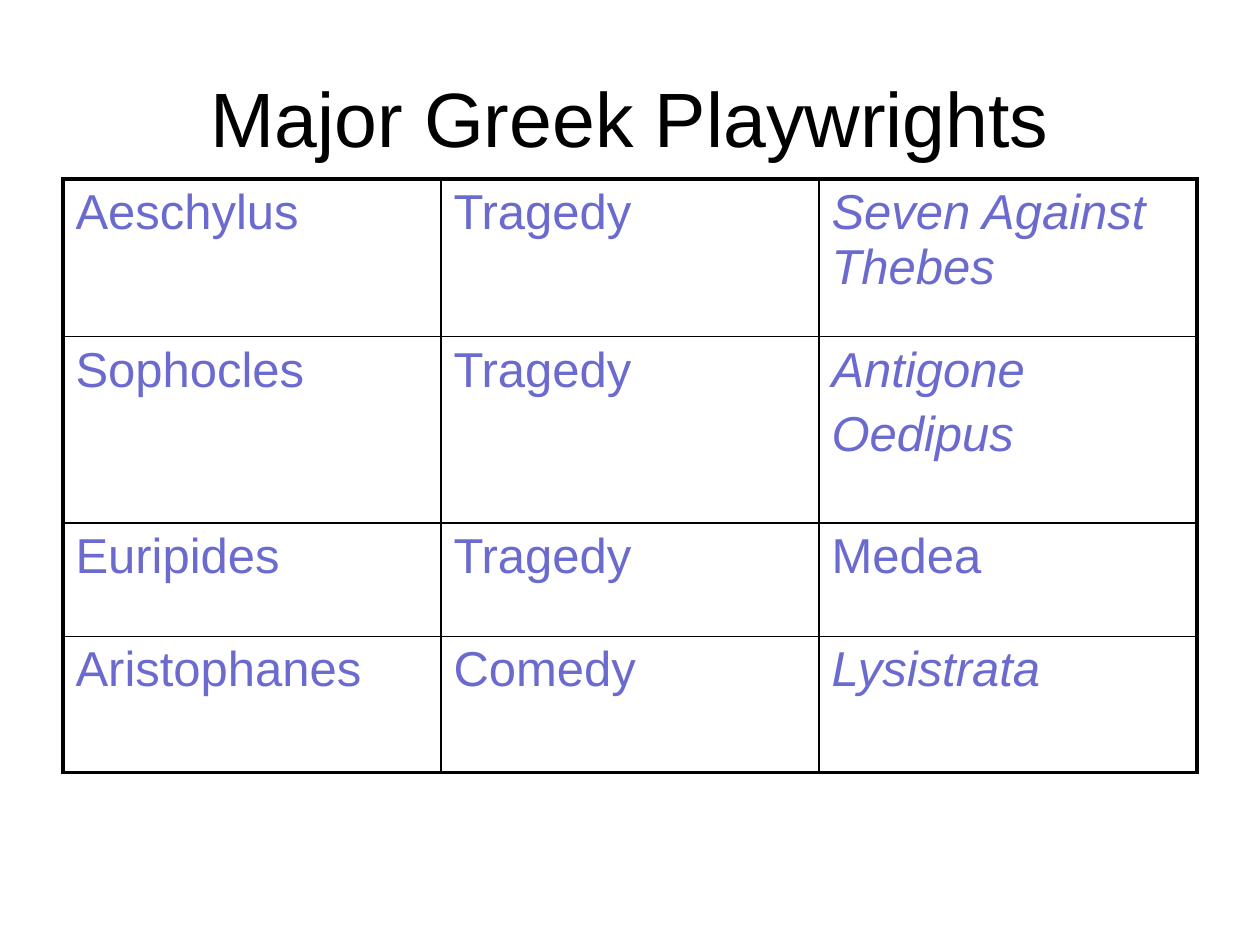
from lxml.etree import SubElement
from pptx import Presentation
from pptx.dml.color import RGBColor
from pptx.enum.text import MSO_ANCHOR, PP_ALIGN
from pptx.oxml.ns import qn
from pptx.util import Inches, Pt

COLOURS = {"title": "000000", "border": "000000", "body": "6B6BCF"}
FORMATS = {
    "title": {"name": "Arial", "size": Pt(44)},
    "body": {"name": "Arial", "size": Pt(28), "italic": False},
    "work": {"name": "Arial", "size": Pt(28), "italic": True},
}
THICK, THIN = Pt(2.25), Pt(1)
PLAYWRIGHTS = [
    ("Aeschylus", "Tragedy", ["Seven Against Thebes"], "work"),
    ("Sophocles", "Tragedy", ["Antigone", "Oedipus"], "work"),
    ("Euripides", "Tragedy", ["Medea"], "body"),
    ("Aristophanes", "Comedy", ["Lysistrata"], "work"),
]
ROW_HEIGHTS = [2.5, 2.96, 1.8, 2.16]


class SlideBuilder:
    columns, rows = 20, 15

    def __init__(self, deck):
        self.slide = deck.slides.add_slide(deck.slide_layouts[6])
        self.column = deck.slide_width / self.columns
        self.row = deck.slide_height / self.rows

    def place(self, left, top, width, height):
        return (int(left * self.column), int(top * self.row),
                int(width * self.column), int(height * self.row))

    def add_lines(self, frame, lines, style, colour, align=PP_ALIGN.LEFT):
        for index, line in enumerate(lines):
            para = frame.add_paragraph() if index else frame.paragraphs[0]
            para.alignment = align
            if index:
                para.space_before = Pt(5.6)
            span = para.add_run()
            span.text = line
            for key, value in FORMATS[style].items():
                setattr(span.font, key, value)
            span.font.color.rgb = RGBColor.from_string(COLOURS[colour])

    def title(self, text, *area):
        frame = self.slide.shapes.add_textbox(*self.place(*area)).text_frame
        frame.word_wrap = True
        frame.vertical_anchor = MSO_ANCHOR.MIDDLE
        self.add_lines(frame, [text], "title", "title", PP_ALIGN.CENTER)

    def border(self, cell, widths):
        properties = cell._tc.get_or_add_tcPr()
        for index, (side, width) in enumerate(widths.items()):
            line = SubElement(properties, qn(f"a:ln{side}"), w=str(width))
            fill = SubElement(line, qn("a:solidFill"))
            SubElement(fill, qn("a:srgbClr"), val=COLOURS["border"])
            properties.insert(index, line)

    def table(self, records, heights, left, top, width):
        area = self.place(left, top, width, sum(heights))
        table = self.slide.shapes.add_table(len(records), 3, *area).table
        table.first_row = table.horz_banding = False
        last_row, last_column = len(records) - 1, 2
        for row, (name, genre, works, work_style) in enumerate(records):
            table.rows[row].height = int(heights[row] * self.row)
            contents = [([name], "body"), ([genre], "body"), (works, work_style)]
            for column, (lines, style) in enumerate(contents):
                cell = table.cell(row, column)
                cell.fill.background()
                self.add_lines(cell.text_frame, lines, style, "body")
                self.border(cell, {
                    "L": THICK if column == 0 else THIN,
                    "R": THICK if column == last_column else THIN,
                    "T": THICK if row == 0 else THIN,
                    "B": THICK if row == last_row else THIN,
                })


def main():
    deck = Presentation()
    deck.slide_width, deck.slide_height = Inches(10), Inches(7.5)
    page = SlideBuilder(deck)
    page.title("Major Greek Playwrights", 1, 0.6, 18, 2.5)
    page.table(PLAYWRIGHTS, ROW_HEIGHTS, 1, 2.84, 18)
    deck.save("out.pptx")


if __name__ == "__main__":
    main()
